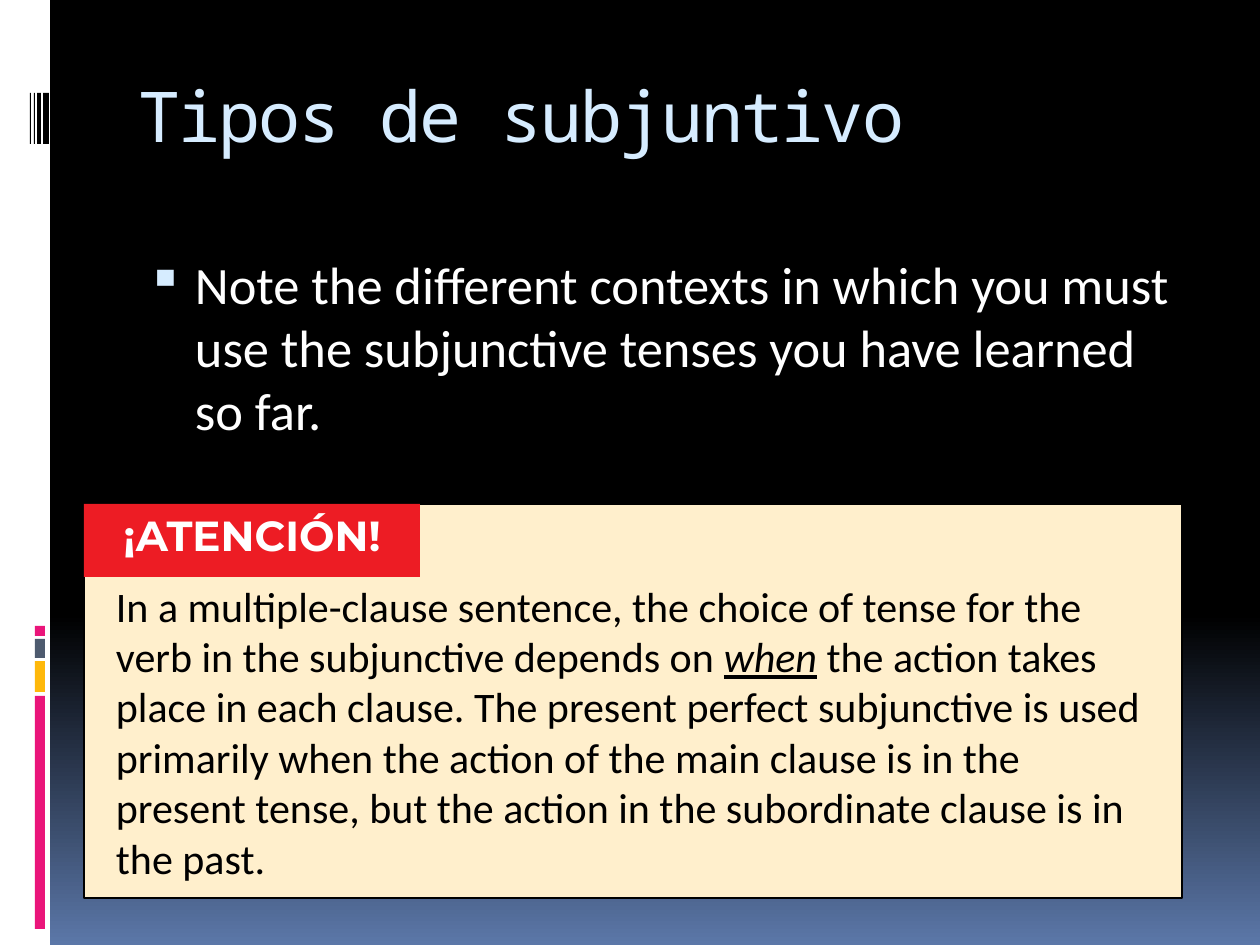
from dataclasses import dataclass

from lxml.etree import SubElement
from pptx import Presentation
from pptx.dml.color import RGBColor
from pptx.enum.shapes import MSO_SHAPE
from pptx.enum.text import MSO_ANCHOR, PP_ALIGN
from pptx.oxml.ns import qn
from pptx.util import Pt

EMU_PER_PX = 914400 / 126


def px(length):
    return round(length * EMU_PER_PX)


@dataclass(frozen=True)
class Theme:
    black: str = "000000"
    white: str = "FFFFFF"
    horizon: str = "5B77A8"
    ice: str = "D6ECFF"
    pink: str = "EA157A"
    amber: str = "FEB80A"
    slate: str = "4E5B6F"
    cream: str = "FFEFCC"
    red: str = "ED1C24"
    title_font: str = "Noto Sans Mono"
    body_font: str = "Calibri"
    label_font: str = "Montserrat"
    title_size: int = 40
    body_size: int = 30
    note_size: int = 24


class SlideBuilder:
    def __init__(self, slide, theme):
        self.slide = slide
        self.theme = theme

    def background(self):
        fill = self.slide.background.fill
        fill.gradient()
        fill.gradient_angle = 270
        stops = ((65, self.theme.black), (100, self.theme.horizon))
        for stop, (percent, color) in zip(fill.gradient_stops, stops):
            stop.position = percent / 100
            stop.color.rgb = RGBColor.from_string(color)

    def frame(self, shape, insets):
        text_frame = shape.text_frame
        text_frame.word_wrap = True
        text_frame.vertical_anchor = MSO_ANCHOR.TOP
        (text_frame.margin_left, text_frame.margin_top,
         text_frame.margin_right, text_frame.margin_bottom) = map(px, insets)
        return text_frame

    def style(self, paragraph, font, size, color, align=PP_ALIGN.LEFT):
        paragraph.alignment = align
        for run in paragraph.runs:
            run.font.name = font
            run.font.size = Pt(size)
            run.font.color.rgb = RGBColor.from_string(color)

    def rect(self, left, top, width, height, color, outline=None):
        shape = self.slide.shapes.add_shape(
            MSO_SHAPE.RECTANGLE, *map(px, (left, top, width, height)))
        shape.shadow.inherit = False
        shape.fill.solid()
        shape.fill.fore_color.rgb = RGBColor.from_string(color)
        if outline:
            shape.line.color.rgb = RGBColor.from_string(outline)
            shape.line.width = Pt(0.75)
        else:
            shape.line.fill.background()
        return shape

    def title(self, text, left, top, width, height):
        title = self.slide.shapes.title
        title.left, title.top, title.width, title.height = map(
            px, (left, top, width, height))
        text_frame = self.frame(title, (12, 3, 12, 6))
        text_frame.text = text
        paragraph = text_frame.paragraphs[0]
        self.style(paragraph, self.theme.title_font, self.theme.title_size, self.theme.ice)
        paragraph.runs[0].font._element.set("spc", "-100")

    def bullet(self, text, left, top, width, height):
        box = self.slide.shapes.add_textbox(*map(px, (left, top, width, height)))
        text_frame = self.frame(box, (12, 6, 12, 6))
        text_frame.text = text
        paragraph = text_frame.paragraphs[0]
        paragraph.space_before = Pt(7)
        self.style(paragraph, self.theme.body_font, self.theme.body_size, self.theme.white)
        properties = paragraph._p.get_or_add_pPr()
        properties.set("marL", str(px(57)))
        properties.set("indent", str(px(-48)))
        bullet_color = SubElement(properties, qn("a:buClr"))
        SubElement(bullet_color, qn("a:srgbClr"), val=self.theme.ice)
        SubElement(properties, qn("a:buSzPct"), val="95000")
        SubElement(properties, qn("a:buChar"), char="▪")

    def note(self, parts, left, top, width, height):
        panel = self.rect(left, top, width, height, self.theme.cream, self.theme.black)
        paragraph = self.frame(panel, (32, 76, 32, 13)).paragraphs[0]
        for text, emphasized in parts:
            run = paragraph.add_run()
            run.text = text
            run.font.italic = run.font.underline = emphasized
        self.style(paragraph, self.theme.body_font, self.theme.note_size, self.theme.black)

    def label(self, text, left, top, width, height):
        tab = self.rect(left, top, width, height, self.theme.red)
        text_frame = self.frame(tab, (13, 6, 13, 6))
        text_frame.text = text
        paragraph = text_frame.paragraphs[0]
        self.style(paragraph, self.theme.label_font, self.theme.note_size,
                   self.theme.white, PP_ALIGN.CENTER)
        paragraph.runs[0].font.bold = True


def main():
    presentation = Presentation()
    presentation.slide_width, presentation.slide_height = px(1260), px(945)
    slide = presentation.slides.add_slide(presentation.slide_layouts[5])
    theme = Theme()
    builder = SlideBuilder(slide, theme)
    builder.background()

    # Side strip with coloured blocks and barcode stripes
    builder.rect(0, 0, 50, 945, theme.white)
    for top, height, color in ((696, 233, theme.pink), (661, 31, theme.amber),
                               (639, 19, theme.slate), (626, 10, theme.pink)):
        builder.rect(35, top, 10, height, color)
    for left, width in ((43, 6), (37, 4), (34, 1), (30, 1)):
        builder.rect(left, 93, width, 51, theme.black)

    # Title and introduction
    builder.title("Tipos de subjuntivo", 126, 70, 1071, 126)
    builder.bullet("Note the different contexts in which you must use the "
                   "subjunctive tenses you have learned so far.",
                   126, 246, 1071, 630)

    # Attention note
    note_left, note_top = 84, 504
    builder.note((
        ("In a multiple-clause sentence, the choice of tense for the verb "
         "in the subjunctive depends on ", False),
        ("when", True),
        (" the action takes place in each clause. The present perfect "
         "subjunctive is used primarily when the action of the main clause "
         "is in the present tense, but the action in the subordinate clause "
         "is in the past.", False),
    ), note_left, note_top, 1098, 394)
    builder.label("¡ATENCIÓN!", note_left, note_top, 336, 73)

    presentation.save("out.pptx")


if __name__ == "__main__":
    main()
